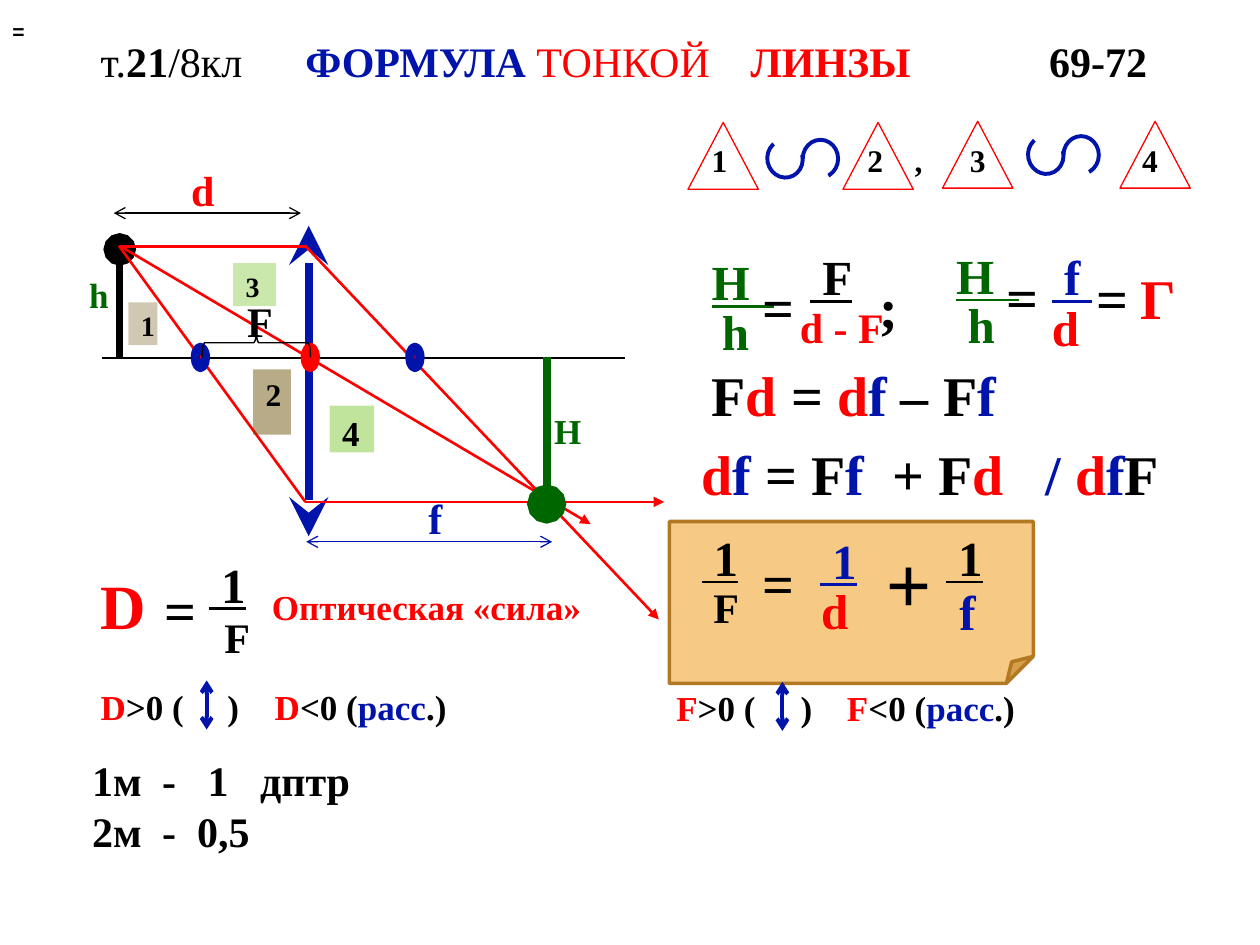
from lxml.etree import SubElement
from pptx import Presentation
from pptx.dml.color import RGBColor
from pptx.enum.shapes import MSO_CONNECTOR, MSO_SHAPE
from pptx.enum.text import MSO_ANCHOR
from pptx.oxml.ns import qn
from pptx.util import Pt

BLACK, RED, BLUE, GREEN = "000000", "FF0000", "0014AC", "006600"
SERIF = "Times New Roman"

presentation = Presentation()
presentation.slide_width, presentation.slide_height = Pt(720), Pt(540)
slide = presentation.slides.add_slide(presentation.slide_layouts[6])
shapes = slide.shapes


def write(paragraph, size, runs, stops=(), font=SERIF):
    """Each run is (text, colour[, style]); style letters: b bold, u underlined."""
    if stops:
        tab_list = SubElement(paragraph._p.get_or_add_pPr(), qn("a:tabLst"))
        for stop in stops:
            SubElement(tab_list, qn("a:tab"), pos=str(Pt(stop)), algn="l")
    for text, color, *style in runs:
        style = style[0] if style else "b"
        run = paragraph.add_run()
        run.text = text
        run.font.name = font
        run.font.size = Pt(size)
        run.font.bold = "b" in style
        run.font.underline = "u" in style
        run.font.color.rgb = RGBColor.from_string(color)


def add_line(start, end, color, width, head=None, tail=None, size="med"):
    connector = shapes.add_connector(
        MSO_CONNECTOR.STRAIGHT, *(Pt(value) for value in (*start, *end)))
    connector.line.color.rgb = RGBColor.from_string(color)
    connector.line.width = Pt(width)
    outline = connector.line._get_or_add_ln()
    for tag, kind in (("a:headEnd", head), ("a:tailEnd", tail)):
        if kind:
            SubElement(outline, qn(tag), type=kind, w=size, len=size)
    SubElement(connector._element.spPr, qn("a:effectLst"))


# Frame of the final formula
note = shapes.add_shape(MSO_SHAPE.FOLDED_CORNER, Pt(382.5), Pt(298), Pt(208), Pt(92.5))
note.shadow.inherit = False
note.line.color.rgb = RGBColor.from_string("B27822")
note.line.width = Pt(2)

# Lens, axis, object, rays
add_line((176.4, 129), (176.4, 306.5), BLUE, 4.5, "stealth", "stealth", "lg")
add_line((58.5, 204.5), (357, 204.5), BLACK, 0.75)
add_line((68.4, 204), (68.4, 142.5), BLACK, 3.75, tail="oval", size="lg")
for start, end in (((174.5, 140.5), (376.5, 354)),
                   ((68.4, 140.5), (337.5, 299.5)),
                   ((174.5, 286.8), (379.5, 286.8))):
    add_line(start, end, RED, 1.5, tail="triangle")
add_line((68, 140.5), (174.5, 286.8), RED, 1.5)

# Numbered triangles of the ray diagram
tinted = [(note, "F0A22E", 58)]
for left, top, width, height, label, size, color, alpha in (
        (73.4, 172.8, 16.6, 24.4, "1", 16, "695008", 31),
        (144.7, 211, 21.6, 37.4, "2", 18, "695008", 48),
        (133.2, 150.4, 24.4, 24.4, "3", 16, "92D050", 48),
        (188.4, 231.8, 25.4, 26.8, "4", 20, "92D050", 56)):
    shape = shapes.add_shape(MSO_SHAPE.RECTANGLE, Pt(left), Pt(top), Pt(width), Pt(height))
    shape.shadow.inherit = False
    shape.line.fill.background()
    shape.text_frame.word_wrap = True
    shape.text_frame.vertical_anchor = MSO_ANCHOR.TOP
    paragraph = shape.text_frame.paragraphs[0]
    paragraph.alignment = 1
    write(paragraph, size, [(label, BLACK)])
    tinted.append((shape, color, alpha))
for shape, color, alpha in tinted:
    shape.fill.solid()
    shape.fill.fore_color.rgb = RGBColor.from_string(color)
    fill_color = shape._element.spPr.find(qn("a:solidFill"))[0]
    SubElement(fill_color, qn("a:alpha"), val=str(alpha * 1000))

# Distances and image
add_line((65, 121.8), (172, 121.8), BLACK, 0.75, "arrow", "arrow")
add_line((175, 309.6), (315.5, 309.6), BLUE, 0.75, "arrow", "arrow")
add_line((68, 141), (175, 141), RED, 1.5)
add_line((312.4, 203.8), (312.4, 288), GREEN, 4.5, tail="oval", size="lg")

# Focal points and optical centre
for left, color in ((111.6, BLUE), (234.2, BLUE), (174.4, RED)):
    point = shapes.add_shape(MSO_SHAPE.OVAL, Pt(left), Pt(198.5), Pt(5.8), Pt(11.5))
    point.shadow.inherit = False
    point.fill.solid()
    point.fill.fore_color.rgb = RGBColor.from_string(RED)
    point.line.color.rgb = RGBColor.from_string(color)
    point.line.width = Pt(5.25)

# Brace, similar triangles, similarity signs: (kind, box, turn, adjustments, colour, width)
outlines = [(MSO_SHAPE.RIGHT_BRACE, (138.2, 164.9, 16.6, 61.9), 270, (0.083, 0.5), BLACK, 0.79)]
for left, top in ((393.2, 70), (481.7, 70), (538.6, 69.3), (640, 69.3)):
    outlines.append((MSO_SHAPE.ISOSCELES_TRIANGLE, (left, top, 40.2, 38.2), 0, (0.5,), RED, 0.75))
for left, top in ((438.5, 79.9), (587.5, 77.8)):
    for offset, turn in ((20.2, 0), (0, 167.6)):
        outlines.append((MSO_SHAPE.ARC, (left + offset, top, 20.2, 21.6), turn,
                         (108, 39), BLUE, 2.25))
for kind, box, turn, adjustments, color, width in outlines:
    shape = shapes.add_shape(kind, *(Pt(value) for value in box))
    shape.shadow.inherit = False
    shape.rotation = turn
    for index, value in enumerate(adjustments):
        shape.adjustments[index] = value
    shape.fill.background()
    shape.line.color.rgb = RGBColor.from_string(color)
    shape.line.width = Pt(width)

# Texts: (left, top, width, height, size, runs, tab stops)
texts = [
    (50.4, 16.6, 669.6, 36, 24,
     [("т.", BLACK, ""), ("21", BLACK), ("/8кл\t", BLACK, ""), ("ФОРМУЛА", BLUE),
      (" ТОНКОЙ\t", RED, ""), ("ЛИНЗЫ\t", RED), ("69-72", BLACK)], (117, 371.5, 542)),
    (102.2, 90.7, 39.6, 36, 24, [("d", RED)], ()),
    (231.8, 277.9, 39.6, 36, 24, [(" f", BLUE)], ()),
    (309.6, 230.4, 28, 31.7, 20, [("H", GREEN)], ()),
    (43.9, 152.6, 28, 31.7, 20, [("h", GREEN)], ()),
    (128.2, 165.6, 39.6, 36, 24, [(" F", BLACK)], ()),
    (399.6, 77, 298, 28.8, 18, [("1\t2\t,\t3\t4", BLACK)], (89, 116, 147.5, 246)),
    (405.4, 168.5, 42.5, 45.4, 28, [("h", GREEN)], ()),
    (399.6, 140.4, 50.4, 41, 28, [("H  ", GREEN, "bu")], ()),
    (450, 168.5, 67.7, 39.6, 24, [("d - F", RED)], ()),
    (455.8, 137.5, 39.6, 41, 28, [(" F", BLACK, "bu")], ()),
    (495.4, 152, 39.6, 45.4, 32, [(";", BLACK)], ()),
    (545.8, 164.9, 33.8, 39.6, 28, [("h", GREEN)], ()),
    (539.3, 136.8, 50.4, 41, 28, [("H  ", GREEN, "bu")], ()),
    (594, 137.5, 39.6, 41, 28, [(" f ", BLUE, "bu")], ()),
    (594, 166.3, 39.6, 41, 28, [("d", RED)], ()),
    (644.4, 146.9, 28, 46, 32, [("Г", RED)], ()),
    (399.6, 202.3, 185.8, 46, 32,
     [("F", BLACK), ("d", RED), (" = ", BLACK), ("d", RED), ("f ", BLUE),
      ("– F", BLACK), ("f", BLUE)], ()),
    (393.8, 247.7, 303.8, 46, 32,
     [("d", RED), ("f ", BLUE), ("= F", BLACK), ("f\t", BLUE), ("+ F", BLACK),
      ("d\t", RED), ("/ ", BLUE), ("d", RED), ("f", BLUE), ("F", BLACK)], (109, 196.5)),
    (394.6, 329, 45.4, 39.6, 24, [(" F", BLACK)], ()),
    (393.8, 298, 39.6, 41, 28, [(" 1", BLACK, "bu")], ()),
    (461.5, 299.5, 39.6, 41, 28, [(" 1", BLUE, "bu")], ()),
    (462.2, 328.3, 39.6, 41, 28, [("d", RED)], ()),
    (534.2, 329, 45.4, 39.6, 28, [(" f", BLUE)], ()),
    (533.5, 298, 39.6, 41, 28, [(" 1", BLACK, "bu")], ()),
    (50.4, 320.4, 39.6, 51, 36, [("D", RED)], ()),
    (115.2, 345.6, 45.4, 39.6, 24, [(" F", BLACK)], ()),
    (112.3, 313.2, 39.6, 41, 28, [(" 1", BLACK, "bu")], ()),
    (148.3, 331.2, 213.8, 31.7, 20, [("Оптическая «сила»", RED)], ()),
]
for left, top in ((428.4, 152), (568, 146.2), (619.2, 146.9), (428.4, 309.6), (87, 325.4)):
    texts.append((left, top, 46, 26, 32, [("=", BLACK)], ()))
for letter, left, top, stops in (("D", 50.4, 388, (72.5, 99.5)), ("F", 379.4, 388.8, (71, 97.5))):
    texts.append((left, top, 236, 31.7, 20,
                  [(letter, RED), (">0 (\t)\t", BLACK), (letter, RED), ("<0 (", BLACK),
                   ("расс", BLUE), (".)", BLACK)], stops))
    add_line((left + 67.7, top + 0.8), (left + 67.7, top + 28.9), BLUE, 2.25, "arrow", "arrow")
for left, top, width, height, size, runs, stops in texts:
    frame = shapes.add_textbox(Pt(left), Pt(top), Pt(width), Pt(height)).text_frame
    frame.word_wrap = True
    write(frame.paragraphs[0], size, runs, stops)

# Signs in a sans-serif font
for box, text, size, style in (((499.7, 302.4, 46, 26), "+", 44, ""),
                               ((0, 0, 720, 36), "=", 12, "b")):
    frame = shapes.add_textbox(*(Pt(value) for value in box)).text_frame
    frame.word_wrap = True
    frame.vertical_anchor = MSO_ANCHOR.MIDDLE if size == 12 else MSO_ANCHOR.TOP
    write(frame.paragraphs[0], size, [(text, BLACK, style)], font="Arial")

# Dioptre examples
frame = shapes.add_textbox(Pt(39.6), Pt(427.7), Pt(191.5), Pt(65.5)).text_frame
frame.word_wrap = True
write(frame.paragraphs[0], 24, [(" 1м\t-\t1\tдптр", BLACK)], (46, 72, 102))
write(frame.add_paragraph(), 24, [(" 2м\t-\t0,5", BLACK)], (46, 66))

presentation.save("out.pptx")
